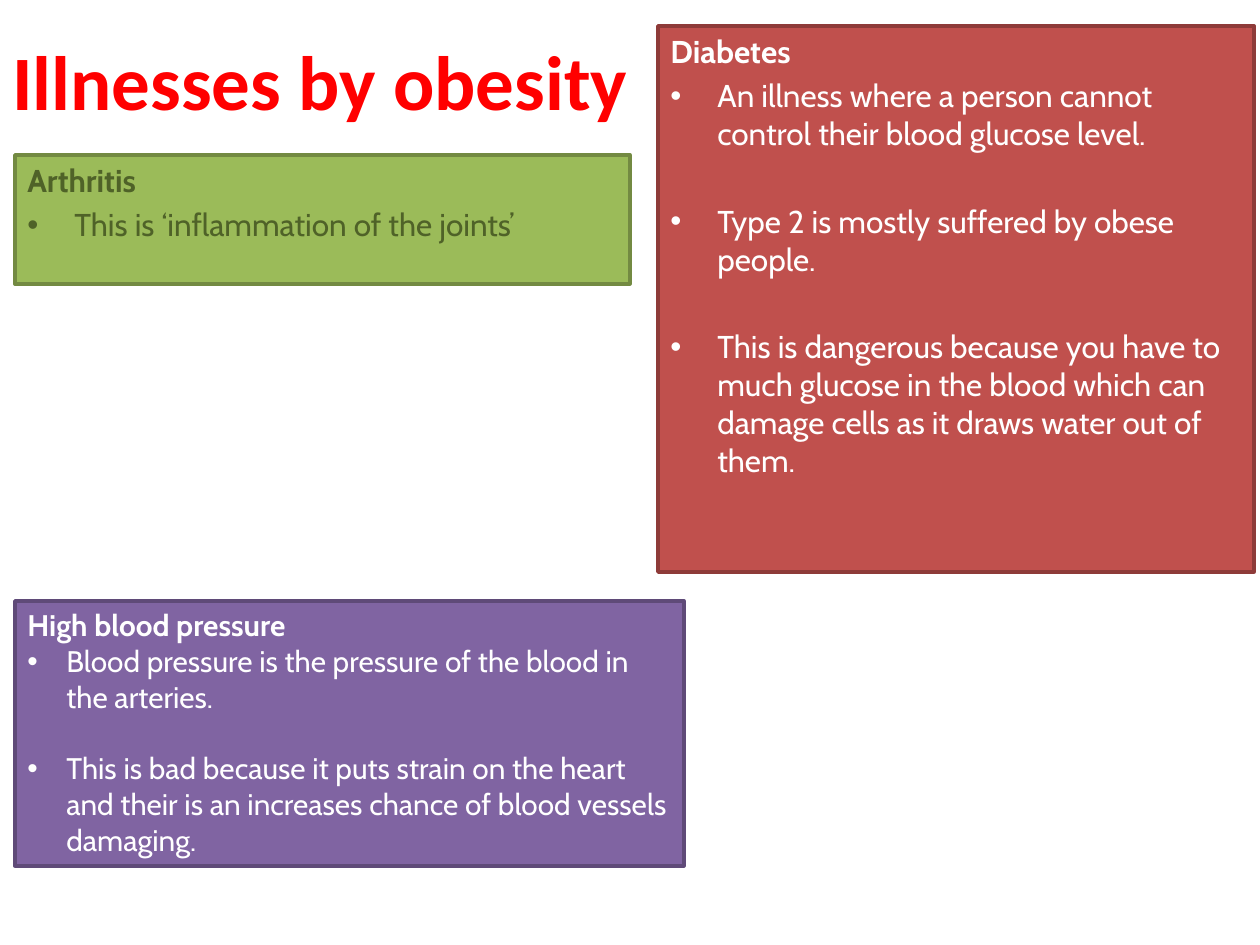
"""Build a slide on illnesses caused by obesity."""
from lxml.etree import SubElement
from pptx import Presentation
from pptx.dml.color import RGBColor
from pptx.enum.shapes import MSO_SHAPE
from pptx.enum.text import MSO_ANCHOR as ANCHOR, PP_ALIGN as ALIGN
from pptx.oxml.ns import qn
from pptx.util import Pt

SCALE = 914400 / 126
COLORS = {
    "title": "FF0000",
    "white": "FFFFFF",
    "green": "9BBB59", "green line": "738A42", "green text": "4F6228",
    "red": "C0504D", "red line": "8E3B39",
    "purple": "8064A2", "purple line": "5F4A78",
}


def px(*lengths):
    return [round(length * SCALE) for length in lengths]


def color(name):
    return RGBColor.from_string(COLORS[name])


presentation = Presentation()
presentation.slide_width, presentation.slide_height = px(1260, 945)
slide = presentation.slides.add_slide(presentation.slide_layouts[6])

title = slide.shapes.add_textbox(*px(0, 1, 1134, 158))
title.text_frame.word_wrap = True
title.text_frame.vertical_anchor = ANCHOR.MIDDLE
paragraph = title.text_frame.paragraphs[0]
paragraph.text = "Illnesses by obesity"
paragraph.font.name = "Calibri"
paragraph.font.size = Pt(44)
paragraph.font.bold = True
paragraph.font.color.rgb = color("title")

illnesses = [
    ("Arthritis", (15, 155, 615, 129), "green", "green text", 18, 47, 3.6, 28.5,
     ["This is ‘inflammation of the joints’"]),
    ("Diabetes", (658, 26, 596, 546), "red", "white", 18, 47, 3.6, 28.5,
     ["An illness where a person cannot control their blood glucose level.",
      "Type 2 is mostly suffered by obese people.",
      "This is dangerous because you have to much glucose in the blood "
      "which can damage cells as it draws water out of them."]),
    ("High blood pressure", (15, 601, 669, 265), "purple", "white", 17, 39, 0, 20.5,
     ["Blood pressure is the pressure of the blood in the arteries.",
      "This is bad because it puts strain on the heart and their is an "
      "increases chance of blood vessels damaging."]),
]

for heading, box, fill, ink, size, indent, first_gap, gap, points in illnesses:
    shape = slide.shapes.add_shape(MSO_SHAPE.RECTANGLE, *px(*box))
    shape.shadow.inherit = False
    shape.fill.solid()
    shape.fill.fore_color.rgb = color(fill)
    shape.line.color.rgb = color(f"{fill} line")
    shape.line.width = Pt(2)
    frame = shape.text_frame
    frame.word_wrap = True
    frame.vertical_anchor = ANCHOR.TOP
    for index, text in enumerate([heading, *points]):
        paragraph = frame.add_paragraph() if index else frame.paragraphs[0]
        paragraph.text = text
        paragraph.alignment = ALIGN.LEFT
        paragraph.font.name = "Cabin"
        paragraph.font.size = Pt(size)
        paragraph.font.bold = index == 0
        paragraph.font.color.rgb = color(ink)
        if index:
            paragraph.space_before = Pt(first_gap if index == 1 else gap)
            properties = paragraph._p.get_or_add_pPr()
            margin = px(indent)[0]
            properties.set("marL", str(margin))
            properties.set("indent", str(-margin))
            bullet_font = properties.makeelement(qn("a:buFont"), {"typeface": "Arial"})
            properties.find(qn("a:spcBef")).addnext(bullet_font)
            bullet = SubElement(properties, qn("a:buChar"), char="•")
            bullet_font.addnext(bullet)

presentation.save("out.pptx")
